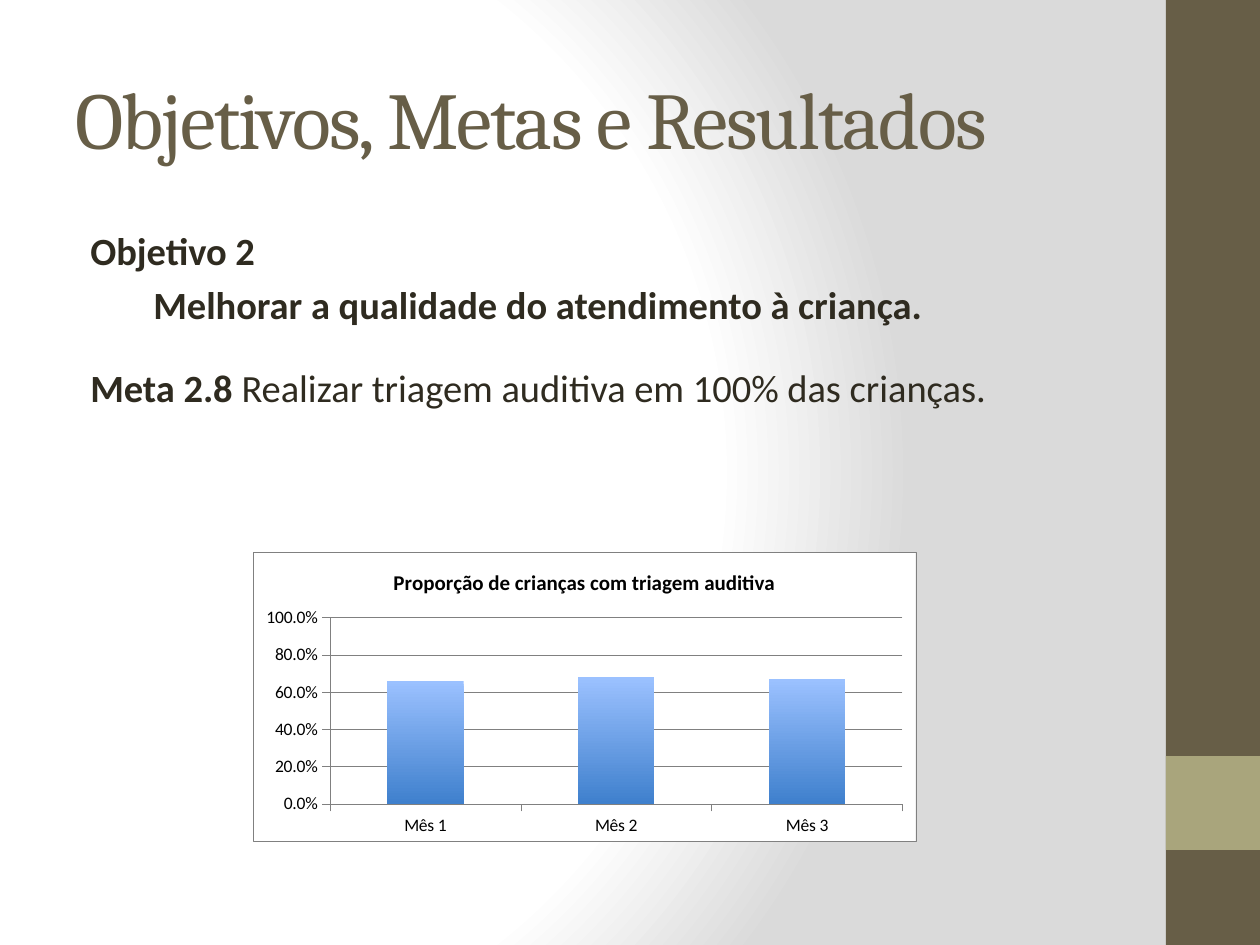
from lxml import etree
from pptx import Presentation
from pptx.chart.data import CategoryChartData
from pptx.dml.color import RGBColor
from pptx.enum.chart import XL_CHART_TYPE, XL_TICK_MARK
from pptx.enum.shapes import MSO_SHAPE
from pptx.enum.text import MSO_ANCHOR
from pptx.util import Emu, Pt

RECT = MSO_SHAPE.RECTANGLE
COLUMN = XL_CHART_TYPE.COLUMN_CLUSTERED
OUTSIDE = XL_TICK_MARK.OUTSIDE
TOP, MIDDLE = MSO_ANCHOR.TOP, MSO_ANCHOR.MIDDLE
SCALE = 914400 // 126
NS_A = "http://schemas.openxmlformats.org/drawingml/2006/main"
NS_C = "http://schemas.openxmlformats.org/drawingml/2006/chart"
BROWN, OLIVE, INK, GREY = "675E47", "A9A57C", "2F2B20", "808080"
CAPTION = "Proporção de crianças com triagem auditiva"


def px(*sizes):
    """Turn pixel lengths into EMU."""
    return [Emu(size * SCALE) for size in sizes]


def rgb(code):
    """Turn a hex string into a colour."""
    return RGBColor.from_string(code)


def style(font, size, color="000000", face="Calibri", bold=False):
    """Set the look of a font."""
    font.size, font.name, font.bold = Pt(size), face, bold
    font.color.rgb = rgb(color)


def paint_back(slide):
    """Fill the background with a circular gradient."""
    slide.background.fill.solid()
    solid = slide.element.find(f".//{{{NS_A}}}solidFill")
    stops = [(0, "FFFFFF"), (75, "FFFFFF"), (100, "DADADA")]
    marks = "".join(
        f'<a:gs pos="{pos}000"><a:srgbClr val="{code}"/></a:gs>' for pos, code in stops
    )
    grad = etree.fromstring(
        f'<a:gradFill xmlns:a="{NS_A}" rotWithShape="1"><a:gsLst>{marks}</a:gsLst>'
        '<a:path path="circle">'
        '<a:fillToRect l="20000" t="50000" r="100000" b="50000"/>'
        "</a:path></a:gradFill>"
    )
    solid.getparent().replace(solid, grad)


def add_block(slide, box, color):
    """Add a plain filled rectangle."""
    block = slide.shapes.add_shape(RECT, *px(*box))
    block.shadow.inherit = False
    block.fill.solid()
    block.fill.fore_color.rgb = rgb(color)
    block.line.fill.background()


def add_text(slide, box, paras, anchor=TOP, indent=0, track=0, **look):
    """Add a text box of (space before, [(text, bold)]) paragraphs."""
    frame = slide.shapes.add_textbox(*px(*box)).text_frame
    frame.word_wrap, frame.vertical_anchor = True, anchor
    for index, (space, runs) in enumerate(paras):
        para = frame.add_paragraph() if index else frame.paragraphs[0]
        para.space_before = Pt(space)
        props = para._p.get_or_add_pPr()
        props.set("marL", str(indent * SCALE))
        props.set("indent", "0")
        for text, bold in runs:
            run = para.add_run()
            run.text = text
            style(run.font, bold=bold, **look)
            run._r.get_or_add_rPr().set("spc", str(track))


def trace(line):
    """Make a line thin and grey."""
    line.color.rgb = rgb(GREY)
    line.width = Pt(0.25)


def white_area(border):
    """Return white area properties with or without a grey border."""
    paint = f'<a:solidFill><a:srgbClr val="{GREY}"/></a:solidFill>' if border else "<a:noFill/>"
    return etree.fromstring(
        f'<c:spPr xmlns:c="{NS_C}" xmlns:a="{NS_A}">'
        '<a:solidFill><a:srgbClr val="FFFFFF"/></a:solidFill>'
        f'<a:ln w="3175">{paint}</a:ln></c:spPr>'
    )


def add_columns(slide, box, title, cats, vals):
    """Add the column chart of monthly shares."""
    data = CategoryChartData(number_format="0.0%")
    data.categories = cats
    data.add_series(title, vals)
    chart = slide.shapes.add_chart(COLUMN, *px(*box), data).chart
    style(chart.font, 10)
    chart.has_legend = False
    chart.has_title = True
    head = chart.chart_title.text_frame
    head.text = title
    style(head.paragraphs[0].runs[0].font, 12, bold=True)

    for axis in (chart.category_axis, chart.value_axis):
        axis.major_tick_mark = OUTSIDE
        style(axis.tick_labels.font, 10)
        trace(axis.format.line)
    scale = chart.value_axis
    scale.minimum_scale, scale.maximum_scale, scale.major_unit = 0, 1, 0.2
    scale.tick_labels.number_format = "0.0%"
    scale.tick_labels.number_format_is_linked = False
    trace(scale.major_gridlines.format.line)

    plot = chart.plots[0]
    plot.gap_width, plot.vary_by_categories = 150, False
    fill = plot.series[0].format.fill
    fill.gradient()
    fill.gradient_angle = 270
    for stop, code in zip(fill.gradient_stops, ("9BC1FF", "3F80CD")):
        stop.color.rgb = rgb(code)

    body = chart.element.find(f"{{{NS_C}}}chart")
    body.addnext(white_area(True))
    body.find(f"{{{NS_C}}}plotArea").append(white_area(False))


def main():
    """Build and save the slide."""
    deck = Presentation()
    deck.slide_width, deck.slide_height = px(1260, 945)
    slide = deck.slides.add_slide(deck.slide_layouts[6])
    paint_back(slide)
    add_block(slide, (1166, 0, 94, 945), BROWN)
    add_block(slide, (1166, 756, 94, 94), OLIVE)
    add_text(
        slide, (63, 38, 1050, 158), [(0, [("Objetivos, Metas e Resultados", False)])],
        anchor=MIDDLE, track=-100, size=46, color=BROWN, face="Cambria",
    )
    goals = [
        (4.4, [("Objetivo 2", True)]),
        (4.4, [("\tMelhorar a qualidade do atendimento à criança.", True)]),
        (21, [("Meta 2.8", True), (" Realizar triagem auditiva em 100% das crianças.", False)]),
    ]
    add_text(slide, (63, 221, 1050, 662), goals, indent=15, size=22, color=INK)
    months = [f"Mês {number}" for number in (1, 2, 3)]
    add_columns(slide, (253, 552, 663, 290), CAPTION, months, (0.66, 0.68, 0.67))
    deck.save("out.pptx")


if __name__ == "__main__":
    main()
